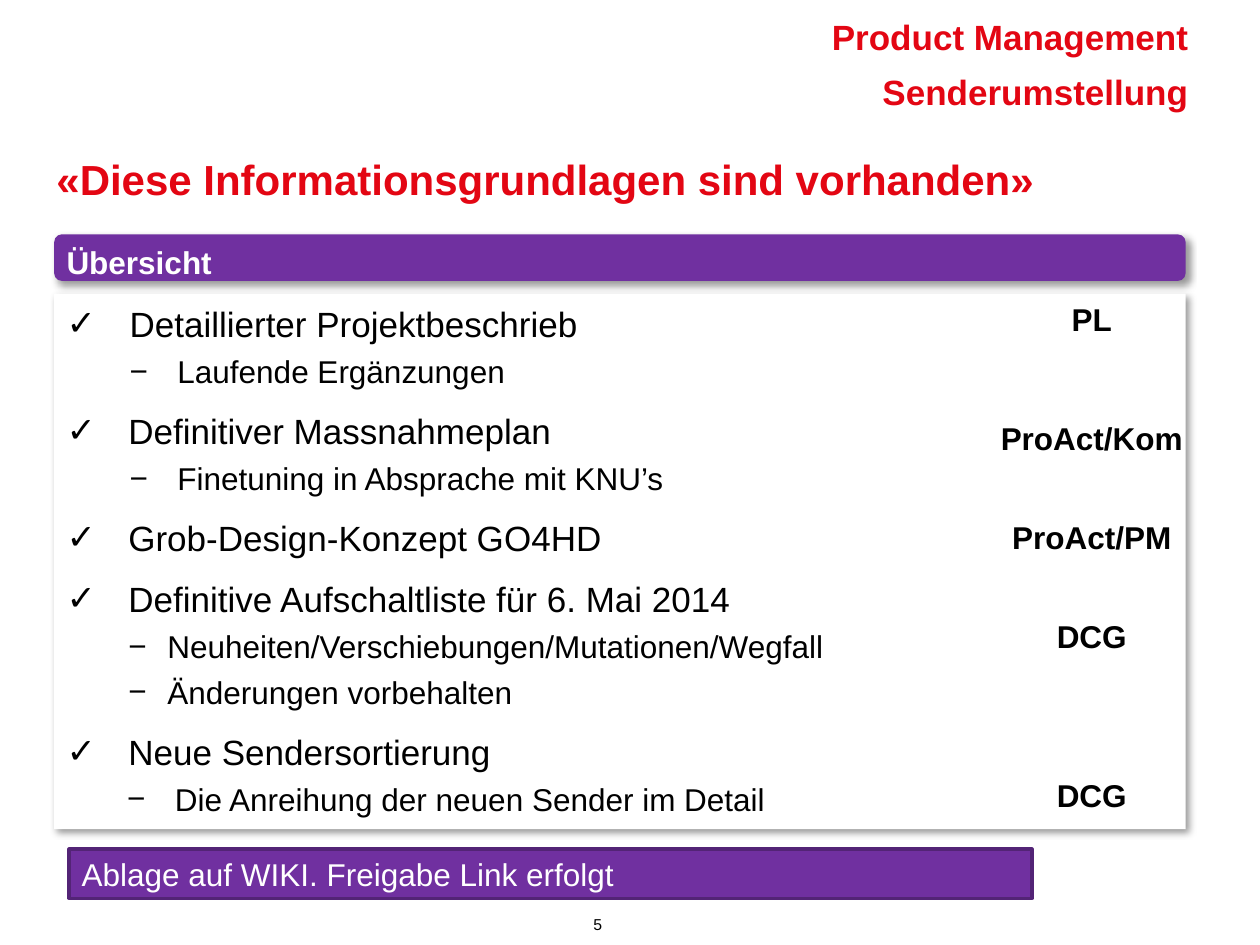
"""Build the slide listing the available project information and its owners."""
from lxml import etree
from pptx import Presentation, util as u
from pptx.dml.color import RGBColor
from pptx.enum import shapes, text
from pptx.oxml import ns

RED = RGBColor(0xE3, 0x06, 0x13)
PURPLE = RGBColor(0x70, 0x30, 0xA0)
DARK_PURPLE = RGBColor(0x53, 0x24, 0x76)
BLACK = RGBColor(0, 0, 0)
WHITE = RGBColor(0xFF, 0xFF, 0xFF)
LEFT, CENTER, RIGHT = text.PP_ALIGN.LEFT, text.PP_ALIGN.CENTER, text.PP_ALIGN.RIGHT

deck = Presentation()
deck.slide_width, deck.slide_height = u.Inches(10), u.Inches(7.5)
COL, ROW = deck.slide_width / 100, deck.slide_height / 100
slide = deck.slides.add_slide(deck.slide_layouts[6])


def add_panel(preset, left, top, width, height, fill, shadowed=True):
    panel = slide.shapes.add_shape(
        preset, int(left * COL), int(top * ROW), int(width * COL), int(height * ROW))
    panel.fill.solid()
    panel.fill.fore_color.rgb = fill
    panel.line.fill.background()
    panel.shadow.inherit = False
    if shadowed:
        effects = panel._element.spPr.find(ns.qn("a:effectLst"))
        shadow = etree.SubElement(
            effects, ns.qn("a:outerShdw"), blurRad=str(u.Pt(4)), dist=str(u.Pt(3)),
            dir="2700000", algn="tl", rotWithShape="0")
        shade = etree.SubElement(shadow, ns.qn("a:srgbClr"), val="000000")
        etree.SubElement(shade, ns.qn("a:alpha"), val="40000")
    return panel


def write(paragraph, wording, size, color, bold=False, align=LEFT):
    paragraph.alignment = align
    run = paragraph.add_run()
    run.text = wording
    run.font.name, run.font.size, run.font.bold = "Arial", u.Pt(size), bold
    run.font.color.rgb = color


add_panel(shapes.MSO_SHAPE.ROUNDED_RECTANGLE, 4.3, 24.8, 89.8, 4.93, PURPLE)
overview = add_panel(shapes.MSO_SHAPE.RECTANGLE, 4.3, 31.07, 89.8, 56.67, WHITE).text_frame
overview.word_wrap = True
overview.vertical_anchor = text.MSO_ANCHOR.TOP
overview.margin_top = u.Inches(0.07)

items = [
    ("✓", "Detaillierter Projektbeschrieb", 0.5, 0.5, 0),
    ("−", "Laufende Ergänzungen", 0.88, 0.38, 6),
    ("✓", "Definitiver Massnahmeplan", 0.49, 0.49, 0),
    ("−", "Finetuning in Absprache mit KNU’s", 0.88, 0.38, 6),
    ("✓", "Grob-Design-Konzept GO4HD", 0.49, 0.49, 6),
    ("✓", "Definitive Aufschaltliste für 6. Mai 2014", 0.49, 0.49, 0),
    ("−", "Neuheiten/Verschiebungen/Mutationen/Wegfall", 0.8, 0.31, 0),
    ("−", "Änderungen vorbehalten", 0.8, 0.31, 6),
    ("✓", "Neue Sendersortierung", 0.49, 0.49, 0),
    ("−", "Die Anreihung der neuen Sender im Detail", 0.86, 0.38, 0),
]
for index, (bullet, wording, indent, hanging, after) in enumerate(items):
    entry = overview.add_paragraph() if index else overview.paragraphs[0]
    entry.level = 0 if bullet == "✓" else 1
    size = 18 if entry.level else 20
    properties = entry._p.get_or_add_pPr()
    properties.set("marL", str(u.Inches(indent)))
    properties.set("indent", str(-u.Inches(hanging)))
    etree.SubElement(properties, ns.qn("a:buFont"), typeface="Arial")
    etree.SubElement(properties, ns.qn("a:buChar"), char=bullet)
    entry.space_before = u.Pt(size / 4 if index else 0)
    entry.space_after = u.Pt(after)
    write(entry, wording, size, BLACK)

labels = [
    ("Product Management", 42.9, 0.67, 52.4, 5.87, 0.07, 20, RED, True, RIGHT),
    ("Senderumstellung", 42.9, 6.53, 52.4, 5.87, 0.07, 20, RED, True, RIGHT),
    ("«Diese Informationsgrundlagen sind vorhanden»",
     3.5, 15.33, 90.6, 7.33, 0.07, 24, RED, True, LEFT),
    ("Übersicht", 4.3, 24.8, 89, 4.93, 0.07, 18, WHITE, True, LEFT),
    ("5", 35.8, 96.13, 23.3, 3.87, 0.05, 9, BLACK, False, CENTER),
]
owners = [("PL", 31.07), ("ProAct/Kom", 43.73), ("ProAct/PM", 54.13),
          ("DCG", 64.67), ("DCG", 81.47)]
labels += [(owner, 77.6, top, 18.1, 5.33, 0.05, 18, BLACK, True, CENTER)
           for owner, top in owners]
for wording, left, top, width, height, inset, *style in labels:
    label = slide.shapes.add_textbox(
        int(left * COL), int(top * ROW), int(width * COL), int(height * ROW)).text_frame
    label.word_wrap = True
    label.margin_top = u.Inches(inset)
    write(label.paragraphs[0], wording, *style)

storage = add_panel(shapes.MSO_SHAPE.RECTANGLE, 5.5, 89.87, 76.4, 5.2, PURPLE, shadowed=False)
storage.line.color.rgb = DARK_PURPLE
storage.line.width = u.Pt(2)
storage.text_frame.word_wrap = True
storage.text_frame.vertical_anchor = text.MSO_ANCHOR.MIDDLE
write(storage.text_frame.paragraphs[0], "Ablage auf WIKI. Freigabe Link erfolgt", 18, WHITE)

deck.save("out.pptx")
